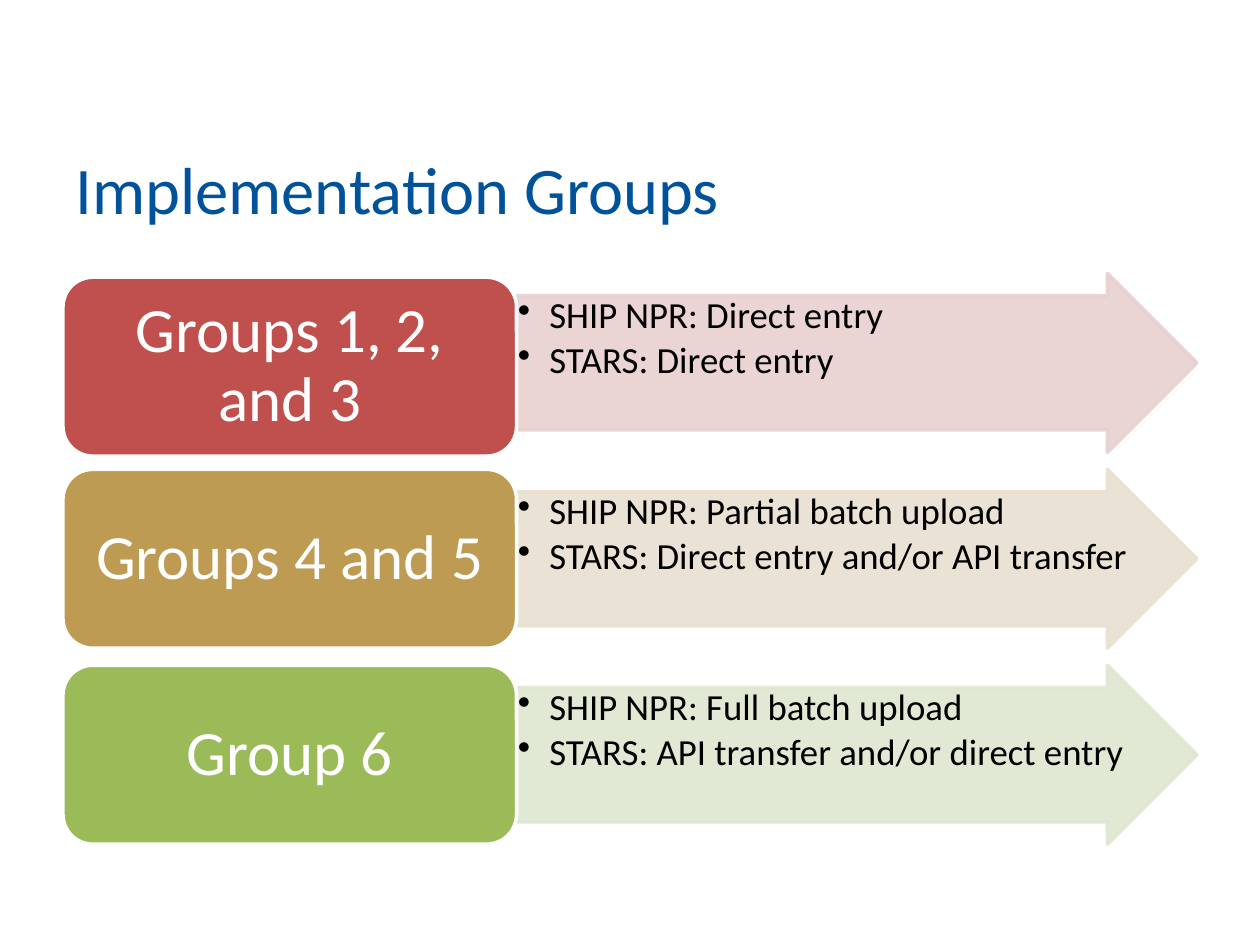
from lxml.etree import SubElement
from pptx import Presentation
from pptx.dml.color import RGBColor
from pptx.enum.shapes import MSO_SHAPE
from pptx.enum.text import MSO_ANCHOR, PP_ALIGN
from pptx.oxml.ns import qn
from pptx.util import Inches, Pt

TITLE = "Implementation Groups"
GROUPS = [
    {"label": "Groups 1, 2, and 3", "color": "red", "nudge": 0.03,
     "items": ["SHIP NPR: Direct entry", "STARS: Direct entry"]},
    {"label": "Groups 4 and 5", "color": "gold", "nudge": 0,
     "items": ["SHIP NPR: Partial batch upload",
               "STARS: Direct entry and/or API transfer"]},
    {"label": "Group 6", "color": "green", "nudge": 0,
     "items": ["SHIP NPR: Full batch upload",
               "STARS: API transfer and/or direct entry"]},
]
COLORS = {
    "title": "00529B", "white": "FFFFFF", "black": "000000",
    "red": "C0504D", "gold": "BD9B53", "green": "9BBB59",
    "red_tint": "E8D0D0", "gold_tint": "E8E1D1", "green_tint": "DEE7D1",
}
FONT = "Calibri"
LEFT, TOP, ROW_H, PITCH = 0.5, 2.17, 1.42, 1.555
LABEL_W, ARROW_W = 3.6, 5.4


def rgb(name):
    return RGBColor.from_string(COLORS[name])


def add_run(p, text, size, color):
    r = p.add_run()
    r.text = text
    r.font.name = FONT
    r.font.size = Pt(size)
    r.font.color.rgb = rgb(color)


def add_block(s, kind, box, fill, line, insets, anchor):
    sp = s.shapes.add_shape(kind, *map(Inches, box))
    sp.shadow.inherit = False
    sp.fill.solid()
    sp.fill.fore_color.rgb = rgb(fill)
    sp.line.color.rgb = rgb(line)
    sp.line.width = Pt(2)
    tf = sp.text_frame
    tf.word_wrap = True
    tf.vertical_anchor = anchor
    tf.margin_left = tf.margin_right = Inches(insets[0])
    tf.margin_top = tf.margin_bottom = Inches(insets[1])
    return sp


def set_opacity(sp, percent):
    for color in sp.element.spPr.iter(qn("a:srgbClr")):
        SubElement(color, qn("a:alpha"), val=str(percent * 1000))


def add_bullet(p):
    pPr = p._p.get_or_add_pPr()
    pPr.set("marL", str(Inches(0.25)))
    pPr.set("indent", str(Inches(-0.25)))
    SubElement(pPr, qn("a:buChar"), char="•")


def add_arrow(s, top, tint, items):
    sp = add_block(s, MSO_SHAPE.RIGHT_ARROW, (LEFT + LABEL_W, top, ARROW_W, ROW_H),
                   tint, tint, (0.01, 0.01), MSO_ANCHOR.TOP)
    sp.adjustments[0], sp.adjustments[1] = 0.75, 0.5
    set_opacity(sp, 90)
    tf = sp.text_frame
    for i, item in enumerate(items):
        p = tf.add_paragraph() if i else tf.paragraphs[0]
        add_bullet(p)
        p.alignment = PP_ALIGN.LEFT
        p.line_spacing = 0.9
        p.space_after = Pt(3)
        add_run(p, item, 21, "black")


def add_label(s, top, color, text):
    sp = add_block(s, MSO_SHAPE.ROUNDED_RECTANGLE, (LEFT, top, LABEL_W, ROW_H),
                   color, "white", (0.15, 0.07), MSO_ANCHOR.MIDDLE)
    p = sp.text_frame.paragraphs[0]
    p.alignment = PP_ALIGN.CENTER
    p.line_spacing = 0.9
    add_run(p, text, 36, "white")


def add_title(s):
    sp = s.shapes.title
    sp.left, sp.top, sp.width, sp.height = map(Inches, (LEFT, 1.16, 9, 0.67))
    tf = sp.text_frame
    tf.word_wrap = True
    tf.vertical_anchor = MSO_ANCHOR.MIDDLE
    p = tf.paragraphs[0]
    p.alignment = PP_ALIGN.LEFT
    add_run(p, TITLE, 38, "title")


def main():
    prs = Presentation()
    prs.slide_width, prs.slide_height = Inches(10), Inches(7.5)
    s = prs.slides.add_slide(prs.slide_layouts[5])
    add_title(s)
    for i, group in enumerate(GROUPS):
        top = TOP + i * PITCH
        add_arrow(s, top, group["color"] + "_tint", group["items"])
        add_label(s, top + group["nudge"], group["color"], group["label"])
    prs.save("out.pptx")


if __name__ == "__main__":
    main()
